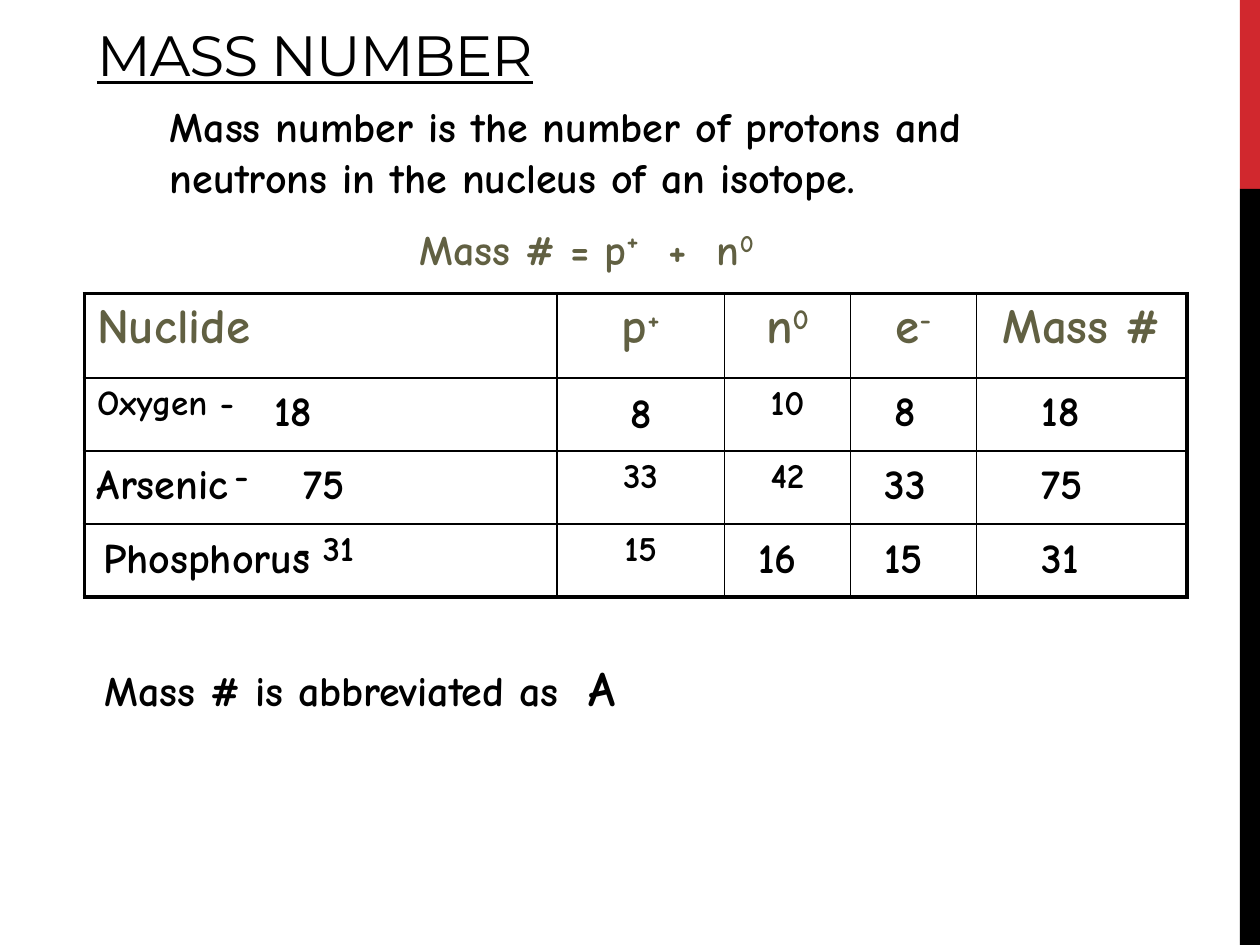
from lxml import etree
from pptx import Presentation
from pptx.dml.color import RGBColor
from pptx.enum import shapes, text
from pptx.oxml import ns
from pptx.util import Inches, Pt

BLACK = RGBColor(0x00, 0x00, 0x00)
RED = RGBColor(0xD1, 0x28, 0x2E)
OLIVE = RGBColor(0x61, 0x60, 0x42)
BODY_FONT = "Comic Neue"
TITLE_FONT = "Montserrat"
RAISED = {"baseline": 30000}
WIDE = {"spc": 850}  # widens one space into a double gap

COLUMNS = [3.75, 1.33, 1, 1, 1.67]
ROWS = [0.67, 0.58, 0.58, 0.58]
HEADERS = [
    [("Nuclide", {})],
    [("p", {}), ("+", RAISED)],
    [("n", {}), ("0", RAISED)],
    [("e", {}), ("-", RAISED)],
    [("Mass #", {})],
]
# Row, column: text and left indent
CELLS = {
    (1, 0): ("Oxygen -", 0), (1, 2): ("10", 0),
    (2, 0): ("-", 1.09), (2, 1): ("33", 0), (2, 2): ("42", 0),
    (3, 0): ("- 31", 1.58), (3, 1): ("15", 0),
}
# Offset of each answer row from the table top: text, offset from the left, width
ANSWERS = {
    0.67: [("18", 1.41, 0.61), ("8", 6.33, 0.4), ("18", 7.5, 0.61)],
    1.25: [("Arsenic", 0, 1.39), ("75", 1.64, 0.61),
           ("33", 6.25, 0.61), ("75", 7.5, 0.61)],
    1.84: [("Phosphorus", 0.05, 1.95), ("16", 5.25, 0.61),
           ("15", 6.25, 0.61), ("31", 7.5, 0.61)],
}


def add_runs(paragraph, runs, size, color=BLACK, font=BODY_FONT, bold=True):
    """Add (text, attributes) runs; a "size" attribute overrides the size."""
    for content, attributes in runs:
        run = paragraph.add_run()
        run.text = content
        run.font.name = font
        run.font.size = Pt(attributes.get("size", size))
        run.font.bold = bold
        run.font.color.rgb = color
        for name in ("baseline", "spc"):
            if name in attributes:
                run._r.get_or_add_rPr().set(name, str(attributes[name]))


def add_text(slide, left, top, width, height, runs, wrap=False, size=24, **style):
    shape = slide.shapes.add_textbox(
        Inches(left), Inches(top), Inches(width), Inches(height))
    frame = shape.text_frame
    frame.word_wrap = wrap
    frame.auto_size = text.MSO_AUTO_SIZE.SHAPE_TO_FIT_TEXT
    add_runs(frame.paragraphs[0], runs, size, **style)
    return shape


def add_side_bar(slide, left, top, width, height):
    red_height = height / 5
    bands = [(top, red_height, RED),
             (top + red_height, height - red_height, BLACK)]
    for band_top, band_height, color in bands:
        band = slide.shapes.add_shape(
            shapes.MSO_SHAPE.RECTANGLE, Inches(left), Inches(band_top),
            Inches(width), Inches(band_height))
        band.shadow.inherit = False
        band.fill.solid()
        band.fill.fore_color.rgb = color
        band.line.fill.background()


def add_title(slide, left, top, width, height):
    shape = add_text(slide, left, top, width, height,
                     [("MASS NUMBER", {"spc": -60})], wrap=True, size=32.4,
                     font=TITLE_FONT, bold=False)
    shape.text_frame.auto_size = text.MSO_AUTO_SIZE.NONE
    shape.text_frame.vertical_anchor = text.MSO_ANCHOR.BOTTOM
    shape.text_frame.paragraphs[0].runs[0].font.underline = True


def add_definition(slide, left, top, width):
    add_text(slide, left, top, width, 0.9,
             [("Mass number is the number of protons and neutrons "
               "in the nucleus of an isotope.", {})], wrap=True)
    formula = [("Mass # = p", {}), ("+", {"size": 28, **RAISED}), (" ", WIDE),
               ("+", {}), (" ", WIDE), ("n", {}), ("0", RAISED)]
    add_text(slide, left + 1.98, top + 0.92, 3.35, 0.5, formula, color=OLIVE)


def set_borders(cell, row, column):
    """Thick lines on the table's outer edge, thin lines inside."""
    outer = {"lnL": column == 0, "lnR": column == len(COLUMNS) - 1,
             "lnT": row == 0, "lnB": row == len(ROWS) - 1}
    properties = cell._tc.get_or_add_tcPr()
    for tag, is_outer in outer.items():
        line = etree.SubElement(properties, ns.qn("a:" + tag),
                                w=str(Pt(2.25 if is_outer else 1)))
        fill = etree.SubElement(line, ns.qn("a:solidFill"))
        etree.SubElement(fill, ns.qn("a:srgbClr"), val=str(BLACK))
    cell.fill.background()


def add_nuclide_table(slide, left, top, width, height):
    table = slide.shapes.add_table(
        len(ROWS), len(COLUMNS), Inches(left), Inches(top),
        Inches(width), Inches(height)).table
    table.first_row = False
    table.horz_banding = False
    for column, column_width in zip(table.columns, COLUMNS):
        column.width = Inches(column_width)
    for row, row_height in zip(table.rows, ROWS):
        row.height = Inches(row_height)

    for row in range(len(ROWS)):
        for column in range(len(COLUMNS)):
            cell = table.cell(row, column)
            set_borders(cell, row, column)
            content, indent = CELLS.get((row, column), ("", 0))
            runs = [(content, {})] if content else []
            size, color = 20, BLACK
            if row == 0:
                runs, size, color = HEADERS[column], 28, OLIVE
            paragraph = cell.text_frame.paragraphs[0]
            paragraph.space_before = Pt(0.2 * size)
            if column > 0:
                paragraph.alignment = text.PP_ALIGN.CENTER
            if indent:
                paragraph._p.get_or_add_pPr().set("marL", str(Inches(indent)))
            add_runs(paragraph, runs, size, color)


def add_answers(slide, left, top):
    for row_offset, answers in ANSWERS.items():
        for content, offset, width in answers:
            add_text(slide, left + offset, top + row_offset, width, 0.5,
                     [(content, {})])
    # Proton count of oxygen sits slightly lower than its row
    add_text(slide, left + 4.24, top + 0.69, 0.4, 0.5, [("8", {})])


def add_abbreviation(slide, left, top, width, height):
    add_text(slide, left, top, width, height,
             [("Mass # is abbreviated as", {}), (" ", WIDE),
              ("A", {"size": 28})])


def main():
    presentation = Presentation()
    presentation.slide_width = Inches(10)
    presentation.slide_height = Inches(7.5)
    slide = presentation.slides.add_slide(presentation.slide_layouts[6])
    add_side_bar(slide, 9.84, 0, 0.16, 7.5)
    add_title(slide, 0.67, 0.08, 8.5, 0.67)
    add_definition(slide, 1.25, 0.75, 7.42)
    add_nuclide_table(slide, 0.67, 2.33, 8.75, 2.42)
    add_answers(slide, 0.67, 2.33)
    add_abbreviation(slide, 0.73, 5.17, 4.99, 0.57)
    presentation.save("out.pptx")


if __name__ == "__main__":
    main()
